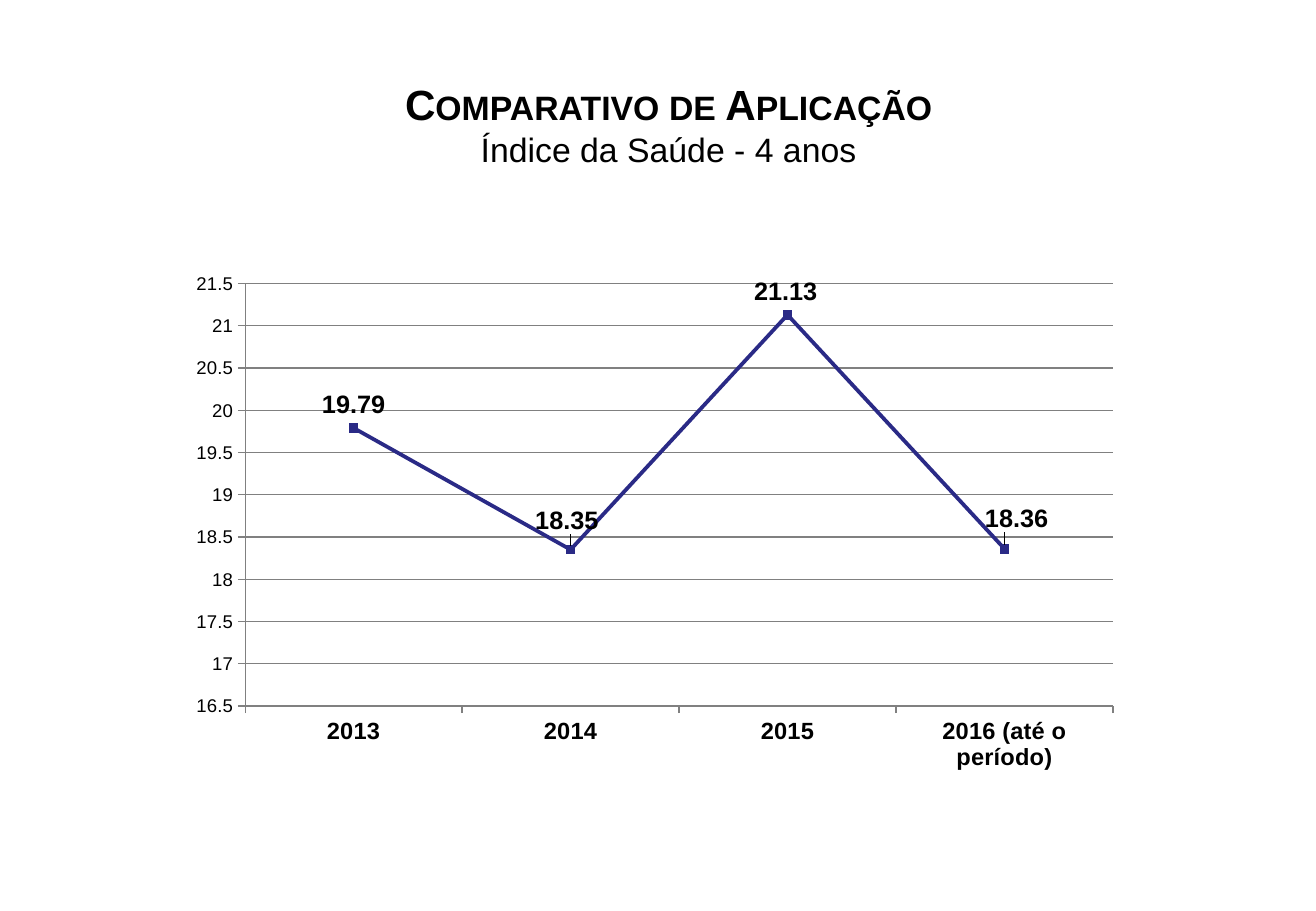
from lxml import etree
from pptx import Presentation
from pptx.chart.data import CategoryChartData
from pptx.dml.color import RGBColor
from pptx.enum.chart import (XL_CHART_TYPE, XL_LABEL_POSITION, XL_MARKER_STYLE,
                             XL_TICK_MARK)
from pptx.enum.text import MSO_ANCHOR, PP_ALIGN
from pptx.oxml.ns import qn
from pptx.util import Cm, Pt

LINE_MARKERS = XL_CHART_TYPE.LINE_MARKERS
ABOVE = XL_LABEL_POSITION.ABOVE
SQUARE = XL_MARKER_STYLE.SQUARE
OUTSIDE = XL_TICK_MARK.OUTSIDE
NO_TICK = XL_TICK_MARK.NONE
MIDDLE = MSO_ANCHOR.MIDDLE
CENTER = PP_ALIGN.CENTER

TITLE = "Comparativo de Aplicação"
SUBTITLE = "Índice da Saúde - 4 anos"
SERIES_NAME = "Índice da Saúde"
# year, index, shift of the label as a share of the chart
HEALTH_INDEX = [
    ("2013", 19.79, (0, 0)),
    ("2014", 18.35, (-0.004, -0.012)),
    ("2015", 21.13, (-0.002, 0)),
    ("2016 (até o período)", 18.36, (0.013, -0.014)),
]
VALUE_SCALE = {"minimum_scale": 16.5, "maximum_scale": 21.5, "major_unit": 0.5}

SLIDE_SIZE = Cm(27.51), Cm(19.05)
HEADING_BOX = Cm(6.6), Cm(1), Cm(14.76), Cm(3.18)
CHART_BOX = Cm(4.09), Cm(5.66), Cm(19.53), Cm(10.46)
PLOT_AREA = {"x": 0.053, "y": 0.026, "w": 0.929, "h": 0.849}

THEME = {
    "text": RGBColor(0, 0, 0),
    "series": RGBColor(0x2A, 0x2A, 0x86),
    "grid": RGBColor(0x80, 0x80, 0x80),
    "title": {"name": "Arial", "size": Pt(25), "bold": True},
    "subtitle": {"name": "Arial", "size": Pt(20), "bold": False},
    "chart": {"name": "Arial", "size": Pt(18), "bold": False},
    "years": {"name": "Arial", "size": Pt(14), "bold": True},
    "scale": {"name": "Arial", "size": Pt(11), "bold": False},
    "labels": {"name": "Arial", "size": Pt(15), "bold": True},
}


def set_all(target, values):
    for attribute, value in values.items():
        setattr(target, attribute, value)


def style_font(font, role):
    set_all(font, THEME[role])
    font.color.rgb = THEME["text"]


def style_line(line, color, width):
    line.color.rgb = THEME[color]
    line.width = Pt(width)


def manual_layout(settings):
    """Return a c:layout element holding the given placement."""
    layout = etree.Element(qn("c:layout"))
    manual = etree.SubElement(layout, qn("c:manualLayout"))
    for tag, value in settings.items():
        etree.SubElement(manual, qn(f"c:{tag}")).set("val", str(value))
    return layout


def add_heading(slide):
    frame = slide.shapes.add_textbox(*HEADING_BOX).text_frame
    set_all(frame, {"word_wrap": True, "vertical_anchor": MIDDLE})
    for paragraph, text, role in (
        (frame.paragraphs[0], TITLE, "title"),
        (frame.add_paragraph(), SUBTITLE, "subtitle"),
    ):
        paragraph.alignment = CENTER
        run = paragraph.add_run()
        run.text = text
        style_font(run.font, role)
        if role == "title":
            run._r.get_or_add_rPr().set("cap", "small")


def style_axes(chart):
    for axis, role in ((chart.category_axis, "years"), (chart.value_axis, "scale")):
        set_all(axis, {"major_tick_mark": OUTSIDE, "minor_tick_mark": NO_TICK})
        style_font(axis.tick_labels.font, role)
        style_line(axis.format.line, "grid", 0.75)
    set_all(chart.value_axis, VALUE_SCALE)
    set_all(chart.value_axis.tick_labels,
            {"number_format": "General", "number_format_is_linked": False})
    style_line(chart.value_axis.major_gridlines.format.line, "grid", 0.75)


def style_series(series):
    series.smooth = False
    style_line(series.format.line, "series", 2.25)
    set_all(series.marker, {"style": SQUARE, "size": 5})
    series.marker.format.fill.solid()
    series.marker.format.fill.fore_color.rgb = THEME["series"]
    style_line(series.marker.format.line, "series", 0.75)

    set_all(series.data_labels, {"show_value": True, "position": ABOVE})
    style_font(series.data_labels.font, "labels")
    for index, (_, _, (dx, dy)) in enumerate(HEALTH_INDEX):
        if dx or dy:
            label = series.points[index].data_label
            label.position = ABOVE
            style_font(label.font, "labels")
            element = series.data_labels._element.xpath(
                f"c:dLbl[c:idx/@val='{index}']")[0]
            element.insert(1, manual_layout({"x": dx, "y": dy}))


def add_index_chart(slide):
    data = CategoryChartData(number_format="0.00")
    data.categories = [year for year, _, _ in HEALTH_INDEX]
    data.add_series(SERIES_NAME, [value for _, value, _ in HEALTH_INDEX])
    chart = slide.shapes.add_chart(LINE_MARKERS, *CHART_BOX, data).chart
    set_all(chart, {"has_legend": False, "has_title": False})
    style_font(chart.font, "chart")
    chart.plots[0].vary_by_categories = False
    style_axes(chart)
    style_series(chart.plots[0].series[0])

    plot_area = chart._chartSpace.chart.plotArea
    for layout in plot_area.findall(qn("c:layout")):
        plot_area.remove(layout)
    plot_area.insert(0, manual_layout(
        {"layoutTarget": "inner", "xMode": "edge", "yMode": "edge", **PLOT_AREA}))


def main():
    deck = Presentation()
    deck.slide_width, deck.slide_height = SLIDE_SIZE
    slide = deck.slides.add_slide(deck.slide_layouts[6])
    add_heading(slide)
    add_index_chart(slide)
    deck.save("out.pptx")


if __name__ == "__main__":
    main()
